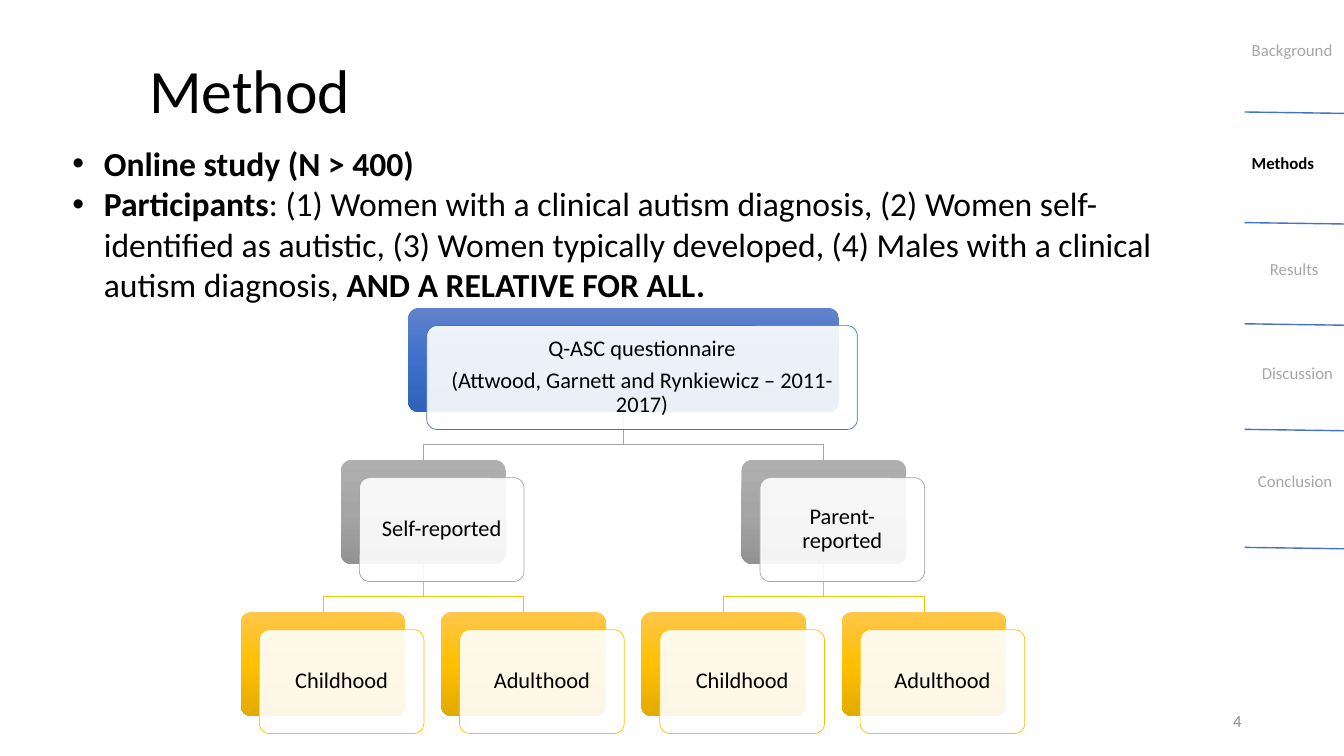
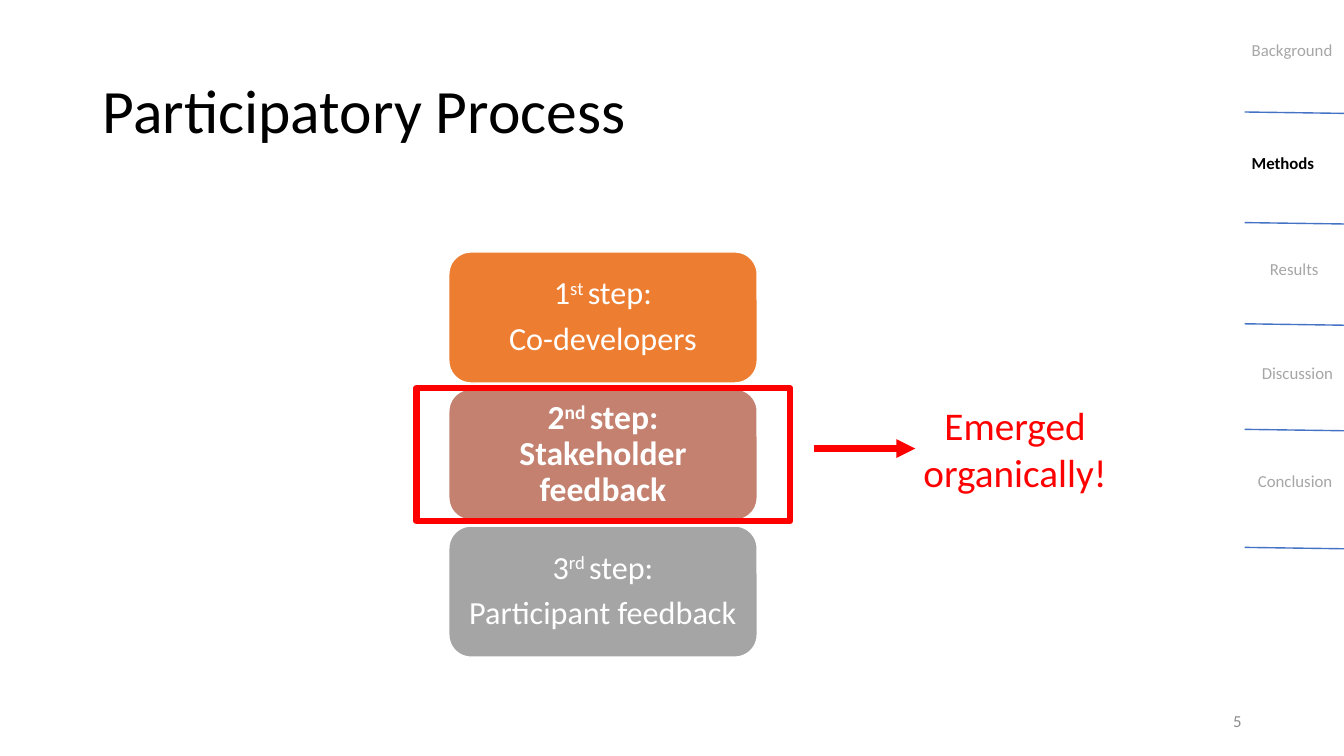
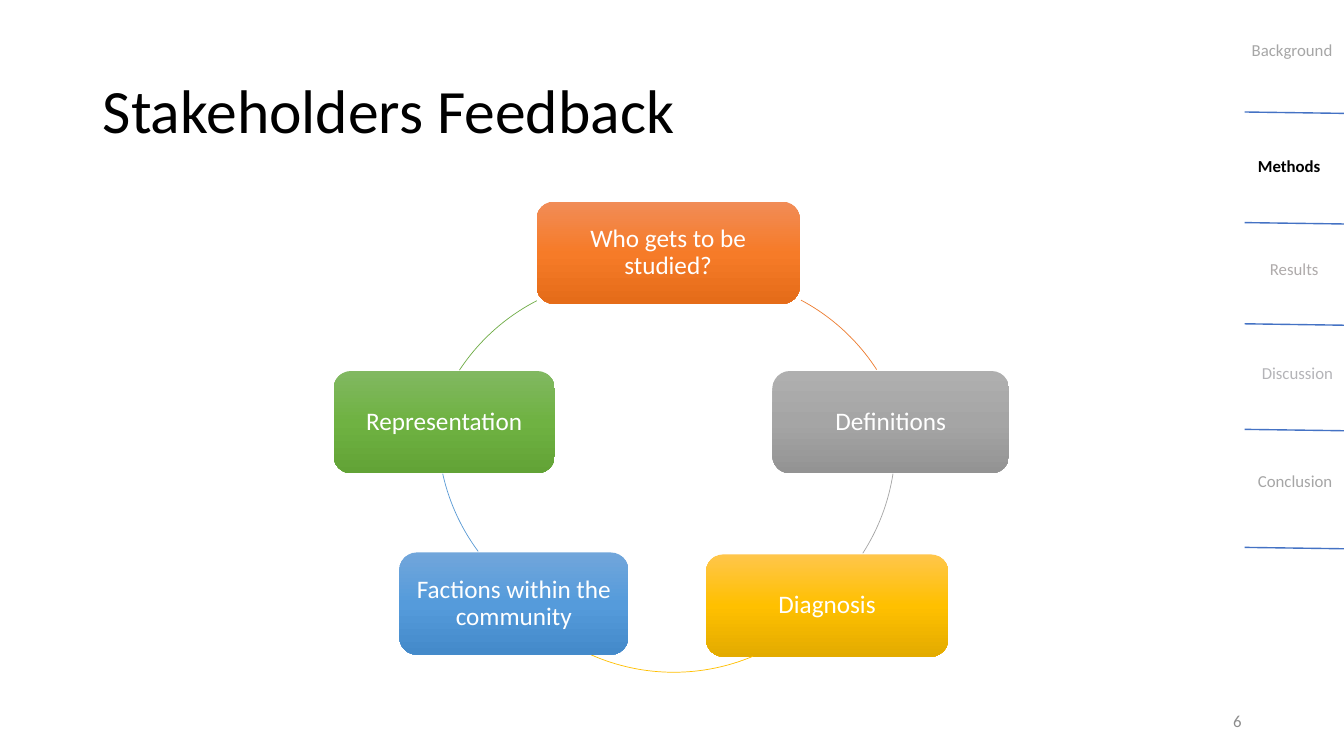
"""Build three slides on study methods with a section navigator."""
import copy

from lxml import etree
from pptx import Presentation
from pptx import util as u
from pptx.dml.color import RGBColor
from pptx.enum import shapes, text
from pptx.oxml.ns import qn

FONT = "Calibri"
COLOURS = {
    "black": "000000", "white": "FFFFFF", "muted": "A6A6A6", "number": "8C8C8C",
    "red": "FF0000", "blue": "4472C4", "orange": "ED7D31", "clay": "C48170",
    "grey": "A5A5A5", "gold": "FFC000", "sky": "5B9BD5", "green": "70AD47",
    "taupe": "AFABAB", "mist": "B4B4B8",
}
GRADIENTS = {
    "blue": ("6183CB", "3E70CA", "3062BB"),
    "orange": ("F18C57", "F67B28", "E56C19"),
    "grey": ("AFAFAF", "A5A5A5", "939393"),
    "gold": ("FFC64B", "FFC000", "E3AB00"),
    "sky": ("71A6DB", "559BDB", "448ACA"),
    "green": ("81B861", "6FB242", "62A336"),
}
ALIGN = text.PP_ALIGN
ANCHOR = text.MSO_ANCHOR
SHAPE = shapes.MSO_SHAPE
NAV_BOX = (887, 25, 73, 367)
NUMBER_BOX = (678, 500.4, 216, 28.8)
NAV_ITEMS = (
    ("Background", 0, 0, 73.4), ("Methods", 0, 80.8, 59.8),
    ("Results", 13, 156.4, 49.7), ("Discussion", 7.2, 230.6, 66.2),
    ("Conclusion", 4.4, 307.6, 68.4),
)
NAV_LINES = (55, 134, 206.3, 281.7, 366)


def points(*lengths):
    """Convert numbers to point lengths."""
    return [u.Pt(length) for length in lengths]


def rgb(name):
    """Look up a named colour."""
    return RGBColor.from_string(COLOURS[name])


def write(frame, paras, size, colour="black", align=ALIGN.LEFT, bold=False,
          spacing=None, after=0):
    """Fill a frame with paragraphs, each a string or a list of (text, mark) runs."""
    for index, content in enumerate(paras):
        para = frame.paragraphs[0] if index == 0 else frame.add_paragraph()
        marks = [None]
        if isinstance(content, str):
            para.text = content
        else:
            marks = [mark for _, mark in content]
            for words, _ in content:
                para.add_run().text = words
        para.alignment = align
        para.space_before, para.space_after = points(0, after)
        if spacing:
            para.line_spacing = spacing
        for span, mark in zip(para.runs, marks):
            span.font.name = FONT
            span.font.size = u.Pt(size)
            span.font.bold = bold or mark == "bold"
            span.font.color.rgb = rgb(colour)
            if mark == "super":
                span.font._element.set("baseline", "30000")


def add_text(page, box, paras, size, wrap=True, anchor=ANCHOR.TOP, **style):
    """Add a text box."""
    frame = page.shapes.add_textbox(*points(*box)).text_frame
    frame.word_wrap = wrap
    frame.vertical_anchor = anchor
    write(frame, paras, size, **style)
    return frame


def outline(shape, colour=None, weight=0.5):
    """Set or remove a shape's line and drop its shadow."""
    shape.shadow.inherit = False
    if colour:
        shape.line.color.rgb = rgb(colour)
        shape.line.width = u.Pt(weight)
    else:
        shape.line.fill.background()


def blend(shape, name):
    """Fill a shape with a vertical three-stop gradient."""
    shape.fill.gradient()
    shape.fill.gradient_angle = 270
    stops = shape._element.spPr.find(".//" + qn("a:gsLst"))
    stops.append(copy.deepcopy(stops[-1]))
    for stop, position, value in zip(shape.fill.gradient_stops, (0, 0.5, 1),
                                     GRADIENTS[name]):
        stop.position = position
        stop.color.rgb = RGBColor.from_string(value)


def rounded(page, box, corner=0.17):
    """Add a rounded rectangle."""
    shape = page.shapes.add_shape(SHAPE.ROUNDED_RECTANGLE, *points(*box))
    shape.adjustments[0] = corner
    return shape


def label(shape, paras, size, colour, margins=(5, 5), **style):
    """Write centred text inside a diagram shape."""
    frame = shape.text_frame
    frame.word_wrap = True
    frame.vertical_anchor = ANCHOR.MIDDLE
    frame.margin_left = frame.margin_right = u.Pt(margins[0])
    frame.margin_top = frame.margin_bottom = u.Pt(margins[1])
    write(frame, paras, size, colour, ALIGN.CENTER, spacing=0.9,
          after=round(size * 0.35, 1), **style)


def add_line(page, start, end, colour, weight, arrow=False):
    """Add a straight line, with an arrowhead at its end if asked."""
    line = page.shapes.add_connector(shapes.MSO_CONNECTOR.STRAIGHT,
                                     *points(*start, *end))
    line.line.color.rgb = rgb(colour)
    line.line.width = u.Pt(weight)
    if arrow:
        etree.SubElement(line.line._get_or_add_ln(), qn("a:tailEnd"), type="triangle")
    etree.SubElement(line._element.spPr, qn("a:effectLst"))


def navigator(page, box, shift=(0, 0), tints=None):
    """Draw the section list with the current section in bold."""
    left, top, width, _ = box
    for name, across, down, wide in NAV_ITEMS:
        current = name == "Methods"
        dx, dy = shift if current else (0, 0)
        colour = "black" if current else (tints or {}).get(name, "muted")
        add_text(page, (left + across + dx, top + down + dy, wide, 21.8), [name], 12,
                 wrap=False, colour=colour, bold=current)
    for down in NAV_LINES:
        add_line(page, (left + 2, top + down), (left + width, top + down + 1),
                 "blue", 1)


def start_page(deck, title, number, title_box=(66.2, 28.8, 828, 104.4), **nav):
    """Add a slide with its title, page number and navigator."""
    page = deck.slides.add_slide(deck.slide_layouts[5])
    holder = page.shapes.title
    holder.left, holder.top, holder.width, holder.height = points(*title_box)
    frame = holder.text_frame
    frame.auto_size = text.MSO_AUTO_SIZE.NONE
    frame.vertical_anchor = ANCHOR.MIDDLE
    write(frame, [title], 44, spacing=0.9)
    add_text(page, NUMBER_BOX, [str(number)], 12, anchor=ANCHOR.MIDDLE,
             colour="number", align=ALIGN.RIGHT)
    navigator(page, NAV_BOX, **nav)
    return page


def bullet_list(page, box, paras):
    """Add bulleted text with a hanging indent."""
    frame = add_text(page, box, paras, 24)
    for para in frame.paragraphs:
        props = para._p.get_or_add_pPr()
        props.set("marL", str(u.Pt(22.5)))
        props.set("indent", str(u.Pt(-22.5)))
        etree.SubElement(props, qn("a:buFont"), typeface="Arial")
        etree.SubElement(props, qn("a:buChar"), char="•")


def elbow(page, start, end, bend, colour):
    """Draw a stepped branch whose level part lies a given drop below its start."""
    level = start[1] + bend
    corners = [(start[0], level), (end[0], level), end]
    builder = page.shapes.build_freeform(*points(*start))
    builder.add_line_segments([points(*corner) for corner in corners], close=False)
    branch = builder.convert_to_shape()
    branch.fill.background()
    outline(branch, colour)


def tree(page, box):
    """Draw the questionnaire hierarchy, each parent centred over its children."""
    left, top, width, height = box
    card, tall, offset = 117.6, 74.2, (13.2, 12.6)
    pitch = (width - card - offset[0]) / 3
    drop = (height - tall - offset[1]) / 2
    leaves = [left + card / 2 + pitch * index for index in range(4)]
    parents = [sum(leaves[index:index + 2]) / 2 for index in (0, 2)]
    root = sum(parents) / 2
    nodes = [(root, 0, 307.6, "blue", [
        "Q-ASC questionnaire", "(Attwood, Garnett and Rynkiewicz – 2011-2017)"])]
    edges = []
    for index, (parent, name) in enumerate(zip(parents, ("Self-reported",
                                                         "Parent-reported"))):
        nodes.append((parent, 1, card, "grey", [name]))
        edges.append((root, parent, 0, "grey"))
        for leaf, age in zip(leaves[index * 2:], ("Childhood", "Adulthood")):
            nodes.append((leaf, 2, card, "gold", [age]))
            edges.append((parent, leaf, 1, "gold"))
    for start, end, level, colour in reversed(edges):
        y = top + drop * level
        elbow(page, (start, y + tall), (end, y + drop), 23.5, colour)
    for centre, level, wide, colour, words in nodes:
        x, y = centre - wide / 2, top + drop * level
        back = rounded(page, (x, y, wide, tall), 0.1)
        blend(back, colour)
        outline(back)
        front = rounded(page, (x + offset[0], y + offset[1], wide, tall), 0.1)
        front.fill.solid()
        front.fill.fore_color.rgb = rgb("white")
        white = front._element.spPr.find(".//" + qn("a:srgbClr"))
        etree.SubElement(white, qn("a:alpha"), val="90000")
        outline(front, colour)
        label(front, words, 16, "black")


def steps(page, box):
    """Stack the three process steps with equal gaps."""
    left, top, width, height = box
    tall = 93.6
    pitch = (height - tall) / 2
    content = (
        ("orange", 23, False, [[("1", None), ("st ", "super"), ("step:", None)],
                               "Co-developers"]),
        ("clay", 24, True, [[("2", None), ("nd ", "super"),
                             ("step: Stakeholder feedback", None)]]),
        ("grey", 23, False, [[("3", None), ("rd ", "super"), ("step:", None)],
                             "Participant feedback"]),
    )
    for index, (colour, size, bold, paras) in enumerate(content):
        step = rounded(page, (left, top + pitch * index, width, tall))
        step.fill.solid()
        step.fill.fore_color.rgb = rgb(colour)
        outline(step, "white", 1)
        label(step, paras, size, "white", (7.2, 3.6), bold=bold)


def callout(page, box):
    """Frame the middle step and point to a remark."""
    left, top, width, height = box
    frame = page.shapes.add_shape(SHAPE.RECTANGLE, *points(left, top, 267, height))
    frame.fill.background()
    outline(frame, "red", 4.5)
    y = top + 43.2
    add_line(page, (left + 284.4, y), (left + 356.4, y), "red", 4.5, arrow=True)
    add_text(page, (left + width - 174.2, top + 5.8, 174.2, 75),
             ["Emerged organically!"], 28, colour="red", align=ALIGN.CENTER)


def cycle(page, box):
    """Draw five themes joined by arcs."""
    left, top, _, _ = box
    diameter = 292.3
    themes = (
        ("Who gets to be studied?", "orange", (145, 0, 188), (119.1, 53.3, 298, 327.1)),
        ("Definitions", "grey", (313.5, 121, 169), (109, 25.9, 8.8, 32.8)),
        ("Diagnosis", "gold", (266, 252, 173), (96.8, 43.9, 67.2, 113.8)),
        ("Factions within the community", "sky", (47, 250.6, 163.5),
         (74.5, 16.6, 143.4, 167.5)),
        ("Representation", "green", (0, 121, 158), (65.8, 54.7, 213.4, 242.8)),
    )
    for name, colour, (x, y, wide), (arc_x, arc_y, start, end) in themes:
        theme = rounded(page, (left + x, top + y, wide, 73))
        blend(theme, colour)
        outline(theme)
        label(theme, [name], 18, "white")
        arc = page.shapes.add_shape(
            SHAPE.ARC, *points(left + arc_x, top + arc_y, diameter, diameter))
        arc.adjustments[0], arc.adjustments[1] = start * 0.6, end * 0.6
        arc.fill.background()
        outline(arc, colour)


def main():
    """Build and save the deck."""
    deck = Presentation()
    deck.slide_width, deck.slide_height = points(960, 540)

    page = start_page(deck, "Method", 4, (99.4, 28.8, 763.2, 76.3))
    tree(page, (172, 220, 560, 304))
    bullet_list(page, (44.6, 98.6, 786.2, 123.8), [
        [("Online study (N > 400)", "bold")],
        [("Participants", "bold"),
         (": (1) Women with a clinical autism diagnosis, (2) Women self-identified as "
          "autistic, (3) Women typically developed, (4) Males with a clinical autism "
          "diagnosis, ", None),
         ("AND A RELATIVE FOR ALL.", "bold")],
    ])

    page = start_page(deck, "Participatory Process", 5)
    steps(page, (320.6, 180, 220.3, 289.4))
    callout(page, (297.4, 277.2, 514.7, 95))

    page = start_page(deck, "Stakeholders Feedback", 6, shift=(4.4, 2.2),
                      tints={"Results": "taupe", "Discussion": "mist"})
    cycle(page, (238.3, 144, 482.5, 325))

    deck.save("out.pptx")


if __name__ == "__main__":
    main()
